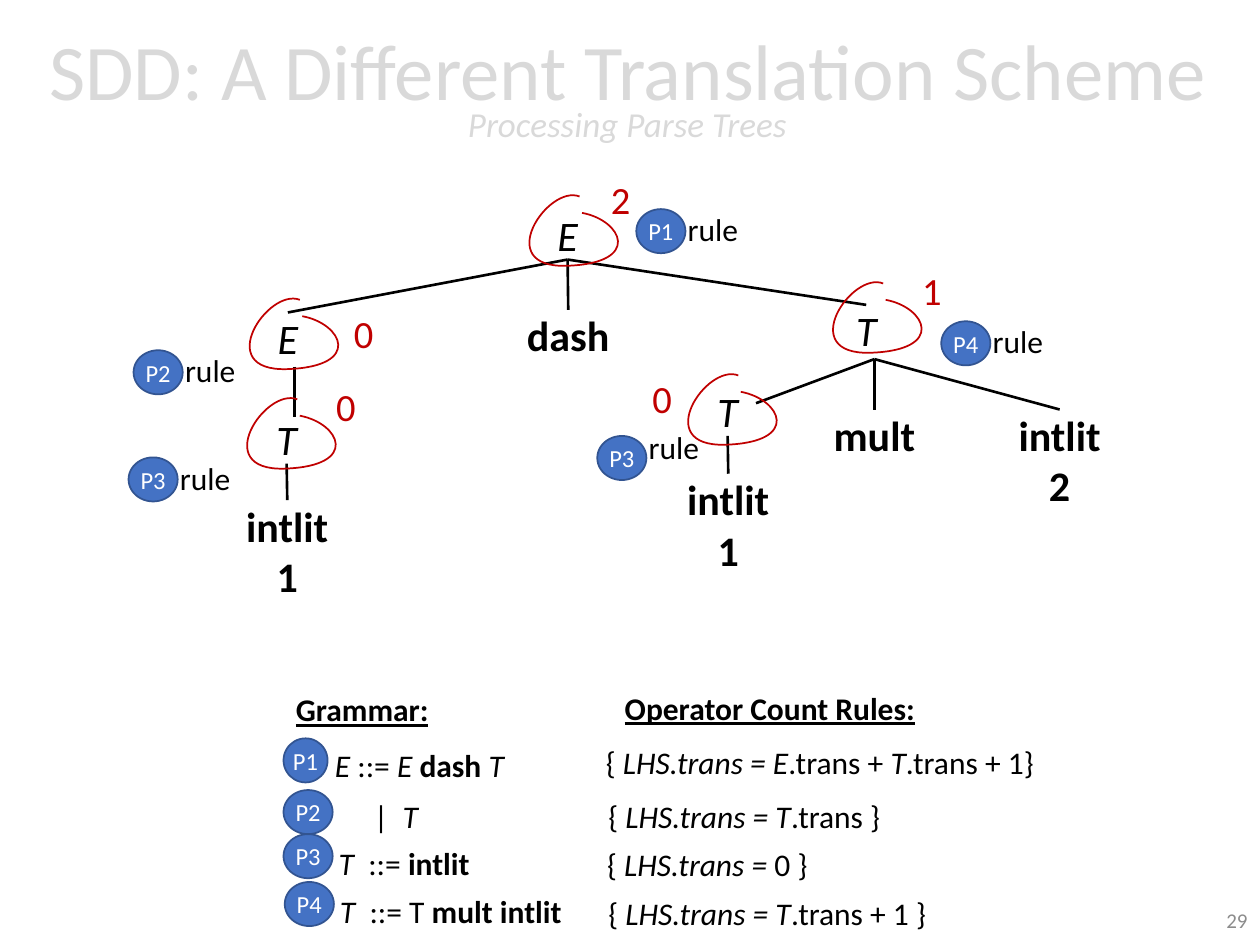
from dataclasses import dataclass
from typing import NamedTuple

from lxml import etree
from pptx import Presentation
from pptx.dml.color import RGBColor
from pptx.enum.shapes import MSO_CONNECTOR, MSO_SHAPE
from pptx.enum.text import MSO_ANCHOR, MSO_AUTO_SIZE, PP_ALIGN
from pptx.oxml.ns import qn
from pptx.util import Inches, Pt

LEFT, CENTER, RIGHT = PP_ALIGN.LEFT, PP_ALIGN.CENTER, PP_ALIGN.RIGHT
MIDDLE, TOP = MSO_ANCHOR.MIDDLE, MSO_ANCHOR.TOP
NO_FIT, GROW = MSO_AUTO_SIZE.NONE, MSO_AUTO_SIZE.SHAPE_TO_FIT_TEXT
OVAL, LINE = MSO_SHAPE.OVAL, MSO_CONNECTOR.STRAIGHT


@dataclass(frozen=True)
class Theme:
    font: str = "Calibri"
    ink: RGBColor = RGBColor(0, 0, 0)
    white: RGBColor = RGBColor(255, 255, 255)
    pale: RGBColor = RGBColor(0xD9, 0xD9, 0xD9)
    grey: RGBColor = RGBColor(0x8C, 0x8C, 0x8C)
    red: RGBColor = RGBColor(0xC0, 0, 0)
    blue: RGBColor = RGBColor(0x44, 0x72, 0xC4)
    edge: RGBColor = RGBColor(0x32, 0x54, 0x91)
    title: int = 45
    sub: int = 20
    node: int = 24
    count: int = 22
    body: int = 18
    badge: int = 14
    page: int = 12


class Box(NamedTuple):
    x: float
    y: float
    w: float
    h: float = 0.4


class Node(NamedTuple):
    text: str
    box: Box
    style: str  # letters: b bold, i italic, u underlined


class Tag(NamedTuple):
    name: str
    x: float
    y: float
    drop: float = -0.04  # label offset from the badge's top


class Rule(NamedTuple):
    name: str
    badge: Box
    left: Box
    prod: list
    right: Box
    act: list


THEME = Theme()


def style_para(para, size: int, color: RGBColor, align=LEFT, style: str = "") -> None:
    para.alignment = align
    font = para.font
    font.name, font.size, font.color.rgb = THEME.font, Pt(size), color
    if "b" in style:
        font.bold = True
    if "i" in style:
        font.italic = True
    if "u" in style:
        font.underline = True


def add_text(slide, box: Box, paras: list, size: int, color: RGBColor, style: str = "",
             align=LEFT, wrap: bool = False, pad: float = 0.05, fit=GROW, anchor=TOP):
    """Each paragraph is a string, or a list of (text, style) runs."""
    shape = slide.shapes.add_textbox(*map(Inches, box))
    frame = shape.text_frame
    frame.word_wrap, frame.auto_size, frame.vertical_anchor = wrap, fit, anchor
    frame.margin_top = frame.margin_bottom = Inches(pad)
    for i, item in enumerate(paras):
        para = frame.add_paragraph() if i else frame.paragraphs[0]
        style_para(para, size, color, align, style)
        for text, look in [(item, "")] if isinstance(item, str) else item:
            run = para.add_run()
            run.text = text
            if look:
                run.font.bold, run.font.italic = "b" in look, "i" in look
    return shape


def add_node(slide, node: Node):
    return add_text(slide, node.box, node.text.split("\n"), THEME.node, THEME.ink,
                    node.style, CENTER, pad=0)


def add_badge(slide, name: str, box: Box) -> None:
    oval = slide.shapes.add_shape(OVAL, *map(Inches, box))
    oval.shadow.inherit = False
    oval.fill.solid()
    oval.fill.fore_color.rgb = THEME.blue
    oval.line.color.rgb, oval.line.width = THEME.edge, Pt(1)
    frame = oval.text_frame
    frame.margin_left = frame.margin_right = frame.margin_top = frame.margin_bottom = 0
    frame.vertical_anchor, frame.word_wrap = MIDDLE, False
    frame.text = name
    style_para(frame.paragraphs[0], THEME.badge, THEME.white, CENTER)


def add_edge(slide, start: tuple, end: tuple, top=None, low=None) -> None:
    """Draw a branch, joined to the node above and below where given."""
    edge = slide.shapes.add_connector(LINE, *map(Inches, start + end))
    edge.line.color.rgb, edge.line.width = THEME.ink, Pt(1.5)
    if top is not None:
        edge.begin_connect(top, 2)
    if low is not None:
        edge.end_connect(low, 0)
    etree.SubElement(edge._element.spPr, qn("a:effectLst"))


# Open loop: a start, then two curves, relative to its frame
LOOP_W, LOOP_H = 0.7, 0.56
STROKES = [
    ("a:moveTo", [(0.4, 0.01)]),
    ("a:cubicBezTo", [(0.15, -0.09), (-0.3, 0.58), (0.3, 0.56)]),
    ("a:cubicBezTo", [(0.9, 0.54), (0.74, 0.2), (0.42, 0.14)]),
]


def add_loop(slide, x: float, y: float) -> None:
    pen = slide.shapes.build_freeform(Inches(x), Inches(y))
    pen.add_line_segments([(Inches(x + LOOP_W), Inches(y + LOOP_H))], close=False)
    loop = pen.convert_to_shape()
    # Bend the outline: python-pptx itself draws straight segments only
    track = loop._element.find(".//" + qn("a:path"))
    for part in list(track):
        track.remove(part)
    for kind, dots in STROKES:
        part = etree.SubElement(track, qn(kind))
        for u, v in dots:
            etree.SubElement(part, qn("a:pt"), x=str(Inches(u)), y=str(Inches(v)))
    loop.shadow.inherit = False
    loop.fill.background()
    loop.line.color.rgb, loop.line.width = THEME.red, Pt(1)


def add_title(slide, head: str, sub: str) -> None:
    title = slide.shapes.title
    title.left, title.top, title.width, title.height = map(Inches, (0.2, 0.03, 9.56, 1.45))
    frame = title.text_frame
    frame.auto_size, frame.vertical_anchor, frame.word_wrap = NO_FIT, MIDDLE, True
    para = frame.paragraphs[0]
    style_para(para, THEME.title, THEME.pale, CENTER)
    para.line_spacing = 0.7
    para.add_run().text = head
    para.add_line_break()
    run = para.add_run()
    run.text, run.font.size, run.font.italic = sub, Pt(THEME.sub), True


NODES = {
    "root": Node("E", Box(4.32, 1.66, 0.37), "i"),
    "expr": Node("E", Box(2.1, 2.48, 0.37), "i"),
    "term": Node("T", Box(2.09, 3.28, 0.37), "i"),
    "one": Node("intlit\n1", Box(1.85, 3.97, 0.86, 0.81), "b"),
    "dash": Node("dash", Box(4.08, 2.46, 0.86), "b"),
    "prod": Node("T", Box(6.69, 2.42, 0.37), "i"),
    "fact": Node("T", Box(5.59, 3.06, 0.37), "i"),
    "unit": Node("intlit\n1", Box(5.35, 3.76, 0.86, 0.81), "b"),
    "mult": Node("mult", Box(6.51, 3.25, 0.86), "b"),
    "two": Node("intlit\n2", Box(7.98, 3.25, 0.86, 0.81), "b"),
}
# start, end, joined node above, joined node below
EDGES = [
    ((4.51, 2.06), (2.29, 2.48), "root", "expr"),
    ((4.51, 2.06), (4.51, 2.46), "root", "dash"),
    ((4.51, 2.06), (6.87, 2.42), "root", "prod"),
    ((2.34, 2.91), (2.34, 3.31), None, None),
    ((2.28, 3.68), (2.28, 3.97), "term", "one"),
    ((6.94, 2.85), (6, 3.2), None, None),
    ((6.94, 2.85), (6.94, 3.25), None, "mult"),
    ((6.94, 2.85), (8.41, 3.25), None, "two"),
    ((5.77, 3.46), (5.78, 3.76), "fact", "unit"),
]
LOOPS = [(1.98, 2.37), (1.96, 3.16), (6.61, 2.24), (4.2, 1.55), (5.46, 2.97)]
COUNTS = [("0", 2.71, 2.41), ("0", 2.57, 2.99), ("2", 4.75, 1.35), ("1", 7.22, 2.07), ("0", 5.08, 2.93)]
TAGS = [Tag("P3", 1.02, 3.63), Tag("P2", 1.06, 2.78), Tag("P3", 4.74, 3.46, -0.11),
        Tag("P4", 7.47, 2.55), Tag("P1", 5.05, 1.66)]
HEADS = [("Grammar:", Box(2.25, 5.43, 1.37)), ("Operator Count Rules:", Box(4.86, 5.42, 3.08))]
RULES = [
    Rule("P1", Box(2.25, 5.86, 0.35, 0.35), Box(2.56, 5.87, 4.87),
         [("E ", "i"), ("::=", ""), (" E ", "i"), ("dash", "b"), (" T", "i")], Box(4.71, 5.85, 3.63),
         [("{ ", ""), ("LHS.trans = E", "i"), (".trans + ", ""), ("T", "i"), (".trans + 1}", "")]),
    Rule("P2", Box(2.25, 6.27, 0.39, 0.35), Box(2.87, 6.28, 4.56), [("|", ""), ("  T", "i")],
         Box(4.73, 6.28, 2.36), [("{ ", ""), ("LHS.trans = T", "i"), (".trans }", "")]),
    Rule("P3", Box(2.25, 6.62, 0.39, 0.35), Box(2.59, 6.65, 4.83),
         [("T  ", "i"), ("::= ", ""), ("intlit", "b")],
         Box(4.72, 6.66, 1.81), [("{ ", ""), ("LHS.trans = ", "i"), ("0 }", "")]),
    Rule("P4", Box(2.26, 7, 0.39, 0.35), Box(2.6, 7.03, 4.83),
         [("T  ", "i"), ("::= T ", ""), ("mult intlit", "b")],
         Box(4.73, 7.05, 2.73), [("{ ", ""), ("LHS.trans = T", "i"), (".trans + 1 }", "")]),
]


def main() -> None:
    deck = Presentation()
    deck.slide_width, deck.slide_height = Inches(10), Inches(7.5)
    slide = deck.slides.add_slide(deck.slide_layouts[5])
    add_title(slide, "SDD: A Different Translation Scheme", "Processing Parse Trees")
    add_text(slide, Box(7.75, 7.1, 2.25), ["29"], THEME.page, THEME.grey,
             align=RIGHT, wrap=True, fit=NO_FIT, anchor=MIDDLE)

    # Parse tree
    nodes = {key: add_node(slide, node) for key, node in NODES.items()}
    for start, end, top, low in EDGES:
        add_edge(slide, start, end, nodes.get(top), nodes.get(low))

    # Visited marks, operator counts and rule tags
    for x, y in LOOPS:
        add_loop(slide, x, y)
    for text, x, y in COUNTS:
        add_text(slide, Box(x, y, 0.33 if text == "1" else 0.42, 0.47), [text], THEME.count, THEME.red)
    for tag in TAGS:
        add_badge(slide, tag.name, Box(tag.x, tag.y, 0.39, 0.35))
        add_text(slide, Box(tag.x + 0.31, tag.y + tag.drop, 0.61), ["rule"], THEME.body, THEME.ink)

    # Grammar and its count rules
    for text, box in HEADS:
        add_text(slide, box, [text], THEME.body, THEME.ink, "bu", wrap=True)
    for rule in RULES:
        add_text(slide, rule.left, [rule.prod], THEME.body, THEME.ink, wrap=True)
        add_badge(slide, rule.name, rule.badge)
        add_text(slide, rule.right, [rule.act], THEME.body, THEME.ink)
    deck.save("out.pptx")


if __name__ == "__main__":
    main()
